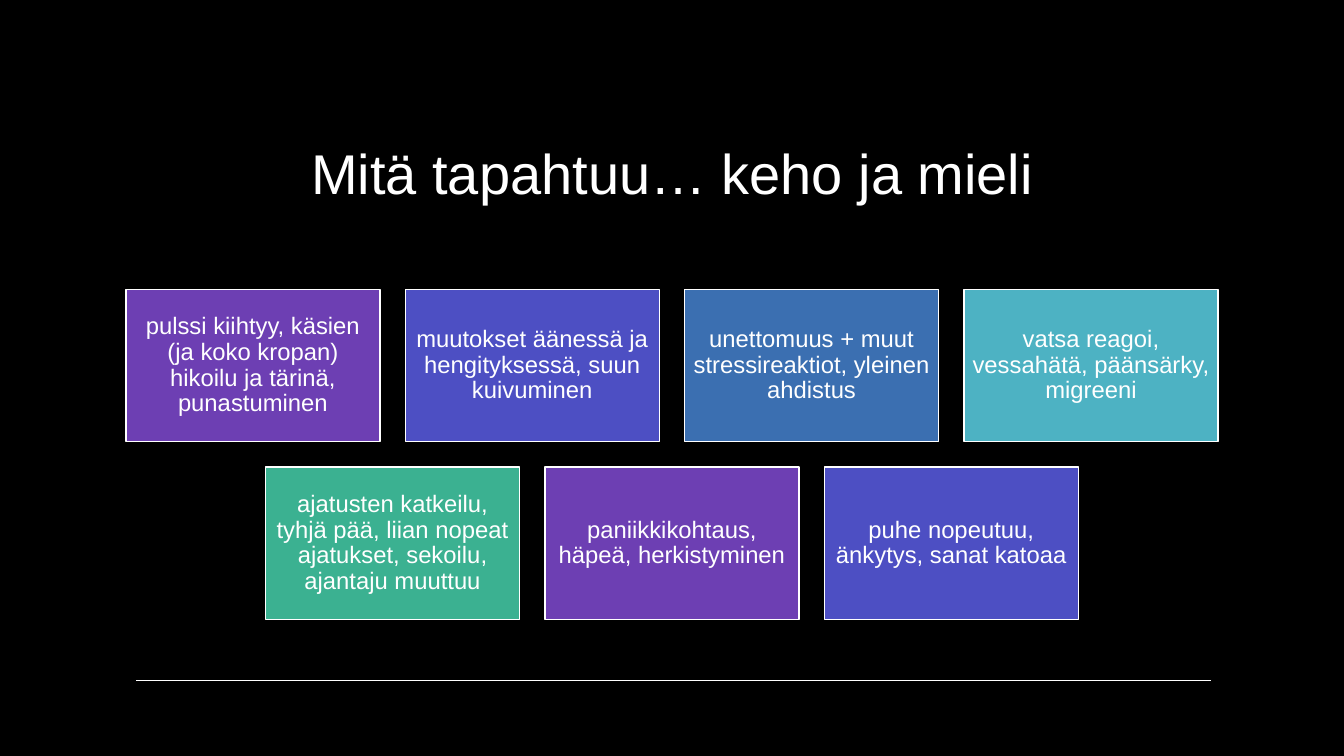
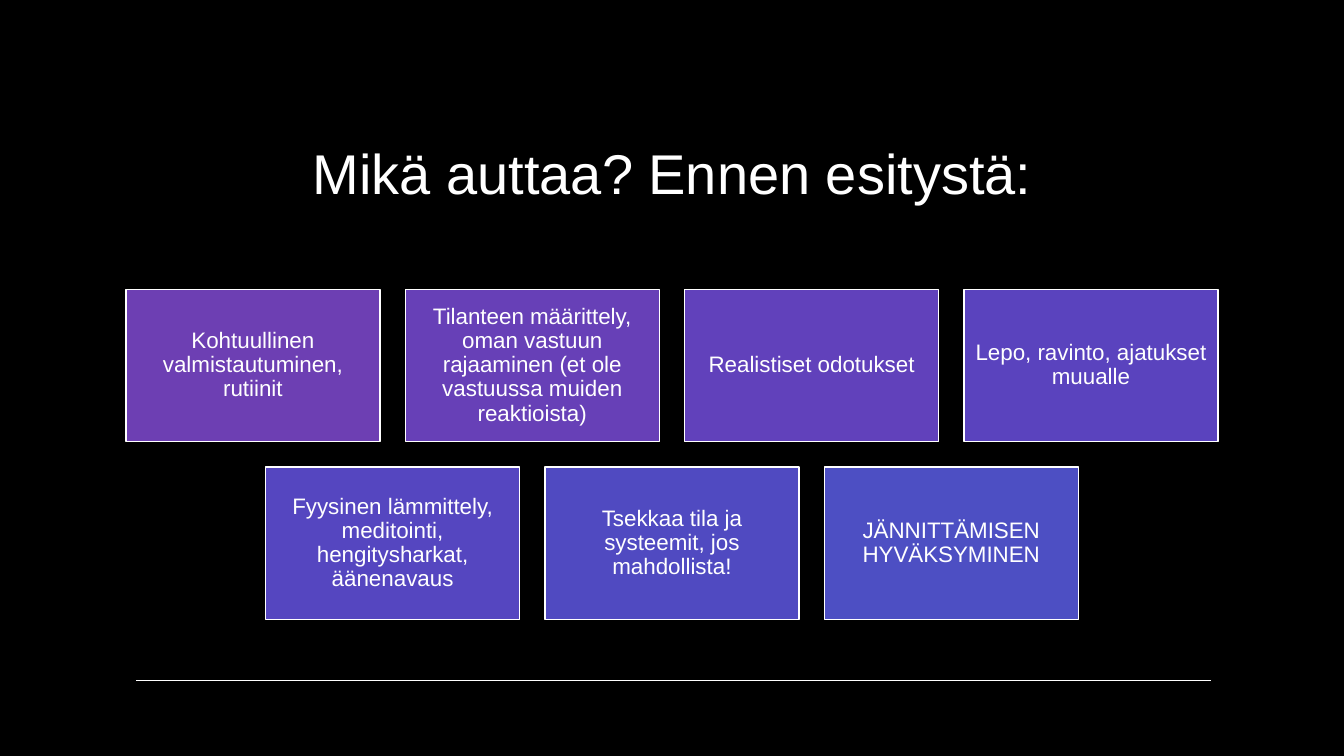
from pptx import Presentation
from pptx.dml.color import RGBColor
from pptx.enum.shapes import MSO_CONNECTOR, MSO_SHAPE
from pptx.enum.text import MSO_ANCHOR, MSO_AUTO_SIZE, PP_ALIGN
from pptx.oxml.ns import qn
from pptx.util import Cm, Pt
from lxml.etree import SubElement

# Colours and font
BLACK = RGBColor(0x00, 0x00, 0x00)
WHITE = RGBColor(0xFF, 0xFF, 0xFF)
PURPLE = RGBColor(0x6D, 0x3F, 0xB3)
INDIGO = RGBColor(0x4D, 0x4F, 0xC3)
BLUE = RGBColor(0x3B, 0x6F, 0xB1)
TEAL = RGBColor(0x4D, 0xB2, 0xC3)
GREEN = RGBColor(0x3B, 0xB1, 0x91)
# Steps between purple and indigo
STEP_1 = RGBColor(0x67, 0x40, 0xB7)
STEP_2 = RGBColor(0x61, 0x41, 0xBB)
STEP_3 = RGBColor(0x5A, 0x43, 0xBE)
STEP_4 = RGBColor(0x55, 0x46, 0xC0)
STEP_5 = RGBColor(0x50, 0x4A, 0xC1)
FONT = "Arial"

# Grid in centimetres: centred rows of equal boxes
PAGE_W, PAGE_H = 33.87, 19.05
BOX_W, BOX_H, GAP = 6.4, 3.84, 0.64
TOP, COLS = 7.29, 4
INSET = Cm(0.18)

# Title, text size, and the boxes in reading order
PAGES = [
    ("Mitä tapahtuu… keho ja mieli", 17, [
        ("pulssi kiihtyy, käsien (ja koko kropan) hikoilu ja tärinä, punastuminen", PURPLE),
        ("muutokset äänessä ja hengityksessä, suun kuivuminen", INDIGO),
        ("unettomuus + muut stressireaktiot, yleinen ahdistus", BLUE),
        ("vatsa reagoi, vessahätä, päänsärky, migreeni", TEAL),
        ("ajatusten katkeilu, tyhjä pää, liian nopeat ajatukset, sekoilu, ajantaju muuttuu", GREEN),
        ("paniikkikohtaus, häpeä, herkistyminen", PURPLE),
        ("puhe nopeutuu, änkytys, sanat katoaa", INDIGO),
    ]),
    ("Mikä auttaa? Ennen esitystä:", 16, [
        ("Kohtuullinen valmistautuminen, rutiinit", PURPLE),
        ("Tilanteen määrittely, oman vastuun rajaaminen (et ole vastuussa muiden reaktioista)", STEP_1),
        ("Realistiset odotukset", STEP_2),
        ("Lepo, ravinto, ajatukset muualle", STEP_3),
        ("Fyysinen lämmittely, meditointi, hengitysharkat, äänenavaus", STEP_4),
        ("Tsekkaa tila ja systeemit, jos mahdollista!", STEP_5),
        ("JÄNNITTÄMISEN HYVÄKSYMINEN", INDIGO),
    ]),
]


def write(frame, text, size, anchor):
    """Fill a frame with one centred white paragraph."""
    frame.word_wrap = True
    frame.auto_size = MSO_AUTO_SIZE.NONE
    frame.vertical_anchor = anchor
    par = frame.paragraphs[0]
    par.alignment = PP_ALIGN.CENTER
    run = par.add_run()
    run.text = text
    run.font.name = FONT
    run.font.size = Pt(size)
    run.font.color.rgb = WHITE
    return par


prs = Presentation()
prs.slide_width, prs.slide_height = Cm(PAGE_W), Cm(PAGE_H)

# Shared background and title place
back = prs.slide_master.background.fill
back.solid()
back.fore_color.rgb = BLACK
layout = prs.slide_layouts[5]
head = layout.placeholders[0]
head.left, head.top, head.width, head.height = Cm(4.87), Cm(2.51), Cm(24.13), Cm(2.8)

for title, size, boxes in PAGES:
    slide = prs.slides.add_slide(layout)
    write(slide.shapes.title.text_frame, title, 40, MSO_ANCHOR.BOTTOM)

    # Bottom rule
    rule = slide.shapes.add_connector(
        MSO_CONNECTOR.STRAIGHT, Cm(3.43), Cm(17.15), Cm(30.53), Cm(17.15))
    rule.line.color.rgb = WHITE
    rule.line.width = Pt(1)
    SubElement(rule._element.spPr, qn("a:effectLst"))

    # Boxes, row by row
    for start in range(0, len(boxes), COLS):
        row = boxes[start:start + COLS]
        left = (PAGE_W - len(row) * (BOX_W + GAP) + GAP) / 2
        top = TOP + start // COLS * (BOX_H + GAP)
        for col, (text, fill) in enumerate(row):
            box = slide.shapes.add_shape(
                MSO_SHAPE.RECTANGLE, Cm(left + col * (BOX_W + GAP)), Cm(top),
                Cm(BOX_W), Cm(BOX_H))
            box.shadow.inherit = False
            box.fill.solid()
            box.fill.fore_color.rgb = fill
            box.line.color.rgb = WHITE
            box.line.width = Pt(1)
            frame = box.text_frame
            frame.margin_left = frame.margin_right = INSET
            frame.margin_top = frame.margin_bottom = INSET
            par = write(frame, text, size, MSO_ANCHOR.MIDDLE)
            par.line_spacing = 0.9

prs.save("out.pptx")
